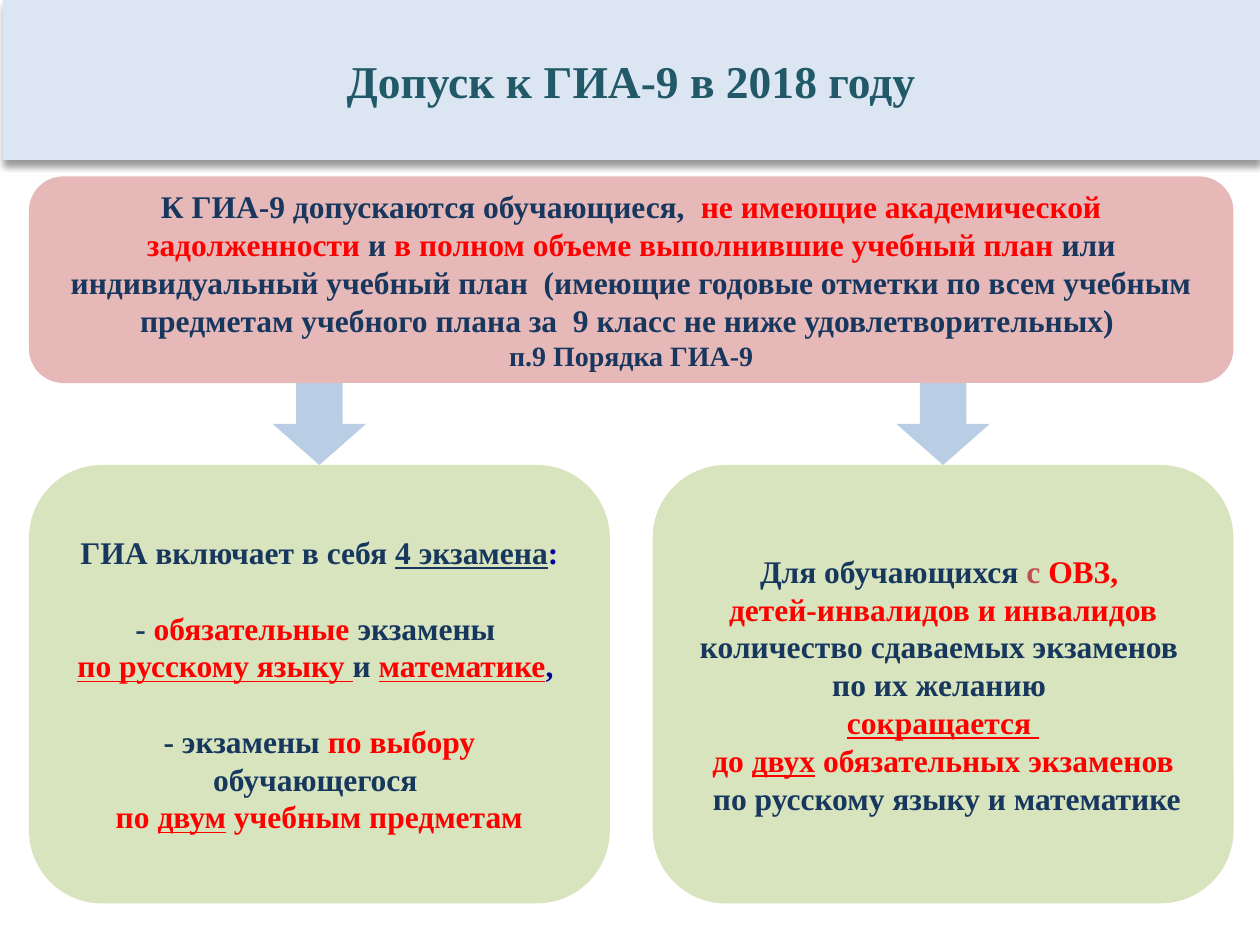
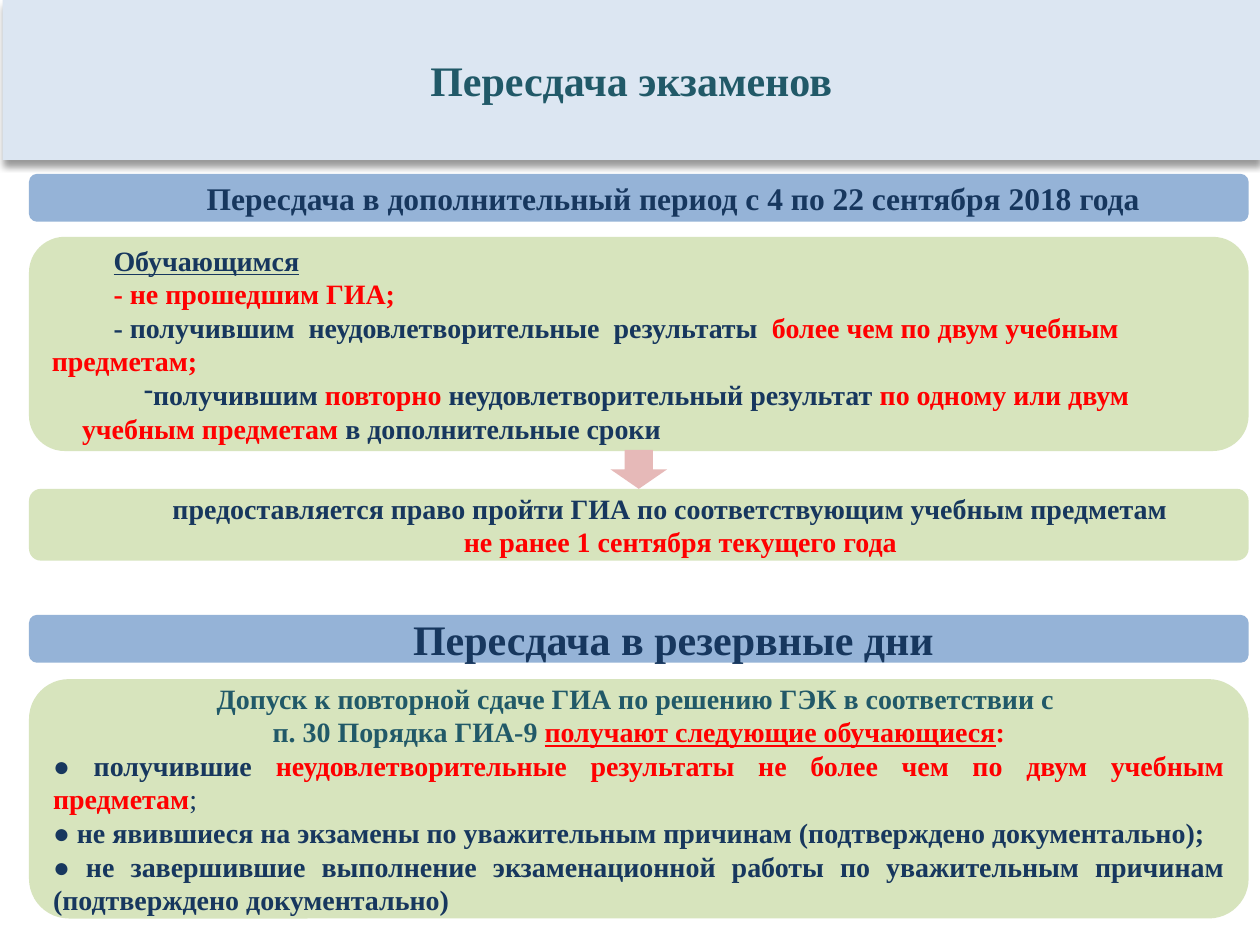
from dataclasses import dataclass

from lxml import etree
from pptx import Presentation
from pptx.dml.color import RGBColor
from pptx.enum import shapes, text
from pptx.oxml.ns import qn
from pptx.util import Inches, Pt

SHAPE = shapes.MSO_SHAPE
CENTER, LEFT, JUSTIFY = text.PP_ALIGN.CENTER, text.PP_ALIGN.LEFT, text.PP_ALIGN.JUSTIFY


@dataclass(frozen=True)
class Theme:
    font: str = "Times New Roman"
    title_band: str = "DCE6F2"
    heading_band: str = "95B3D7"
    green: str = "D7E4BD"
    pink: str = "E6B9B8"
    arrow: str = "B9CDE5"
    title: int = 26
    heading: int = 24
    body: int = 18
    small: int = 16


T = Theme()


@dataclass(frozen=True)
class Style:
    color: str
    underline: bool = False
    bold: bool = True


NAVY, NAVY_U, NAVY_THIN = Style("17375E"), Style("17375E", True), Style("17375E", bold=False)
RED, RED_U = Style("FF0000"), Style("FF0000", True)
TEAL, BLUE, BRICK = Style("215968"), Style("000099"), Style("C0504D")


@dataclass
class Para:
    runs: list
    size: int = T.body
    align: int = CENTER
    first: float = 0
    left: float = 0
    before: float = 0
    bullet: str = ""


def add_block(s, kind, box, fill, paras=()):
    sp = s.shapes.add_shape(kind, *map(Inches, box))
    sp.shadow.inherit = False
    sp.fill.solid()
    sp.fill.fore_color.rgb = RGBColor.from_string(fill)
    sp.line.fill.background()
    tf = sp.text_frame
    tf.word_wrap = True
    tf.vertical_anchor = text.MSO_ANCHOR.MIDDLE
    for i, para in enumerate(paras):
        p = tf.add_paragraph() if i else tf.paragraphs[0]
        fill_paragraph(p, para)
    return sp


def fill_paragraph(p, para):
    p.alignment = para.align
    if para.before:
        p.space_before = Pt(para.before)
    pPr = p._p.get_or_add_pPr()
    pPr.set("marL", str(Inches(para.left)))
    pPr.set("indent", str(Inches(para.first)))
    if para.bullet:
        etree.SubElement(pPr, qn("a:buChar")).set("char", para.bullet)
    for words, style in para.runs:
        r = p.add_run()
        r.text = words
        f = r.font
        f.name, f.size = T.font, Pt(para.size)
        f.bold, f.underline = style.bold, style.underline
        f.color.rgb = RGBColor.from_string(style.color)


def add_title(s, words, size):
    sp = add_block(s, SHAPE.RECTANGLE, (0.02, 0, 9.98, 1.27), T.title_band,
                   [Para([(words, TEAL)], size)])
    effects = sp._element.spPr.find(qn("a:effectLst"))
    shadow = etree.SubElement(effects, qn("a:outerShdw"), blurRad=str(Pt(4)),
                              dist=str(Pt(3)), dir="5400000", rotWithShape="0")
    color = etree.SubElement(shadow, qn("a:srgbClr"), val="000000")
    etree.SubElement(color, qn("a:alpha"), val="40000")


def add_panel(s, box, fill, paras):
    return add_block(s, SHAPE.ROUNDED_RECTANGLE, box, fill, paras)


def add_down_arrow(s, center, top, width, height, fill):
    add_block(s, SHAPE.DOWN_ARROW, (center - width / 2, top, width, height), fill)


def add_heading(s, top, words, size):
    add_panel(s, (0.23, top, 9.68, 0.38), T.heading_band,
              [Para([(words, NAVY)], size, first=0.55)])


def build_admission(s):
    add_title(s, "Допуск к ГИА-9 в 2018 году", T.title)
    add_panel(s, (0.23, 1.4, 9.56, 1.64), T.pink, [
        Para([("К ГИА-9 допускаются обучающиеся,  ", NAVY),
              ("не имеющие академической задолженности ", RED),
              ("и", NAVY),
              (" в полном объеме выполнившие учебный план ", RED),
              ("или индивидуальный учебный план  (имеющие годовые отметки по всем "
               "учебным предметам учебного плана за  9 класс не ниже "
               "удовлетворительных) ", NAVY)]),
        Para([("п.9 Порядка ГИА-9", NAVY)], T.small),
    ])
    exams = [
        Para([("ГИА включает в себя ", NAVY), ("4 экзамена", NAVY_U), (":", BLUE)]),
        Para([("-", NAVY), (" обязательные ", RED), ("экзамены ", NAVY)], before=21.5),
        Para([("по русскому языку ", RED_U), ("и ", NAVY), ("математике", RED_U),
              (", ", BLUE)]),
        Para([("- экзамены ", NAVY), ("по выбору ", RED), ("обучающегося ", NAVY)],
             before=21.5),
        Para([("по ", RED), ("двум", RED_U), (" учебным предметам", RED)]),
    ]
    reduced = [
        Para([("Для обучающихся ", NAVY), ("с ", BRICK), ("ОВЗ, ", RED)]),
        Para([("детей-инвалидов и инвалидов", RED)]),
        Para([("количество сдаваемых экзаменов ", NAVY)]),
        Para([("по их желанию ", NAVY)]),
        Para([("сокращается ", RED_U)]),
        Para([("до ", RED), ("двух", RED_U), (" обязательных экзаменов", RED)]),
        Para([(" по русскому языку и математике", NAVY)]),
    ]
    width = 4.61
    for left, paras in ((0.23, exams), (5.18, reduced)):
        add_panel(s, (left, 3.69, width, 3.48), T.green, paras)
        add_down_arrow(s, left + width / 2, 3.04, 0.74, 0.65, T.arrow)


def build_retake(s):
    add_title(s, "Пересдача экзаменов", T.heading)

    def item(*runs, **options):
        return Para(list(runs), T.small, LEFT, first=0.49, **options)

    add_panel(s, (0.23, 1.88, 9.68, 1.7), T.green, [
        item(("Обучающимся", NAVY_U)),
        item(("- не прошедшим ГИА;", RED)),
        item(("- получившим  неудовлетворительные  результаты  ", NAVY),
             ("более чем по двум учебным предметам;", RED)),
        item(("получившим ", NAVY), ("повторно ", RED),
             ("неудовлетворительный результат ", NAVY),
             ("по одному или двум учебным предметам ", RED),
             ("в дополнительные сроки", NAVY), left=0.24, bullet="-"),
    ])
    add_panel(s, (0.23, 3.88, 9.68, 0.57), T.green, [
        Para([("предоставляется право пройти ГИА по соответствующим учебным предметам ",
               NAVY)], T.small, first=0.55),
        Para([("не ранее 1 сентября текущего года", RED)], T.small, first=0.66),
    ])
    add_down_arrow(s, 5.07, 3.57, 0.45, 0.31, T.pink)
    add_panel(s, (0.23, 5.39, 9.68, 1.9), T.green, [
        Para([("Допуск к повторной сдаче ГИА по решению ГЭК в соответствии с ", TEAL)],
             T.small),
        Para([("п. 30 Порядка ГИА-9 ", TEAL), ("получают следующие обучающиеся", RED_U),
              (":", RED)], T.small),
        Para([("● ", NAVY_THIN), ("получившие ", NAVY),
              ("неудовлетворительные результаты не более чем по двум учебным предметам",
               RED), (";", NAVY_THIN)], T.small, JUSTIFY),
        Para([("● не явившиеся на экзамены по уважительным причинам "
               "(подтверждено документально);", NAVY)], T.small, JUSTIFY),
        Para([("● не завершившие выполнение экзаменационной работы по уважительным "
               "причинам (подтверждено документально)", NAVY)], T.small, JUSTIFY),
    ])
    add_heading(s, 1.38, "Пересдача в дополнительный период с 4 по 22 сентября 2018 года",
                T.body)
    add_heading(s, 4.88, "Пересдача в резервные дни", T.heading)


def main():
    prs = Presentation()
    prs.slide_width, prs.slide_height = Inches(10), Inches(7.5)
    for build in (build_admission, build_retake):
        build(prs.slides.add_slide(prs.slide_layouts[6]))
    prs.save("out.pptx")


if __name__ == "__main__":
    main()
